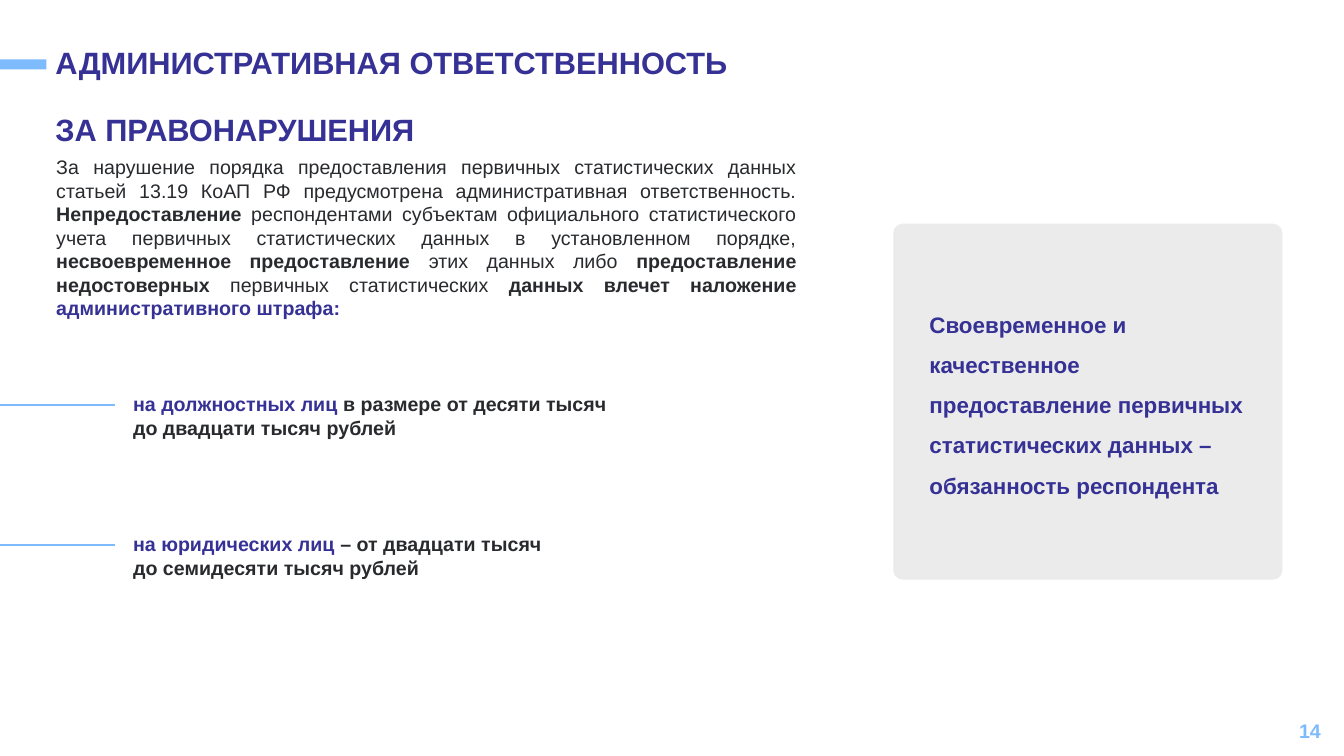
import pptx
import pptx.util
import pptx.dml.color
import pptx.enum.shapes
import pptx.enum.text
import lxml.etree

Inches = pptx.util.Inches
ALIGN = pptx.enum.text.PP_ALIGN
ANCHOR = pptx.enum.text.MSO_ANCHOR
SHAPE = pptx.enum.shapes.MSO_SHAPE

INDIGO, SKY, INK, PALE = "363194", "7DBBFC", "282A2E", "EBEBEB"


def rgb(value):
    return pptx.dml.color.RGBColor.from_string(value)


def write(tf, paragraphs, size, frame=None, **layout):
    """Fill a frame with paragraphs, each a list of (text, colour, bold) runs."""
    frame = {"word_wrap": True, "auto_size": pptx.enum.text.MSO_AUTO_SIZE.NONE,
             "vertical_anchor": ANCHOR.TOP, **(frame or {})}
    for name, value in frame.items():
        setattr(tf, name, value)
    for i, runs in enumerate(paragraphs):
        p = tf.paragraphs[0] if i == 0 else tf.add_paragraph()
        for name, value in layout.items():
            if i or name != "space_before":
                setattr(p, name, value)
        for text, color, bold in runs:
            r = p.add_run()
            r.text = text
            font = {"name": "Arial", "size": pptx.util.Pt(size), "bold": bold}
            for name, value in font.items():
                setattr(r.font, name, value)
            r.font.color.rgb = rgb(color)


def add_text(shapes, box, paragraphs, size, frame=None, **layout):
    sp = shapes.add_textbox(*map(Inches, box))
    write(sp.text_frame, paragraphs, size, frame, **layout)


def add_block(shapes, kind, box, color):
    sp = shapes.add_shape(kind, *map(Inches, box))
    sp.shadow.inherit = False
    sp.fill.solid()
    sp.fill.fore_color.rgb = rgb(color)
    sp.line.fill.background()
    return sp


def add_heading(slide, left, top, width, height):
    add_block(slide.shapes, SHAPE.RECTANGLE, (0, top + 0.16, left + 0.01, 0.1), SKY)
    title = slide.shapes.title
    place = {"left": left, "top": top, "width": width, "height": height}
    for name, value in place.items():
        setattr(title, name, Inches(value))
    lines = ["АДМИНИСТРАТИВНАЯ ОТВЕТСТВЕННОСТЬ", "ЗА ПРАВОНАРУШЕНИЯ"]
    write(title.text_frame, [[(line, INDIGO, True)] for line in lines], 22,
          alignment=ALIGN.LEFT, line_spacing=0.9, space_before=pptx.util.Pt(24))


def add_intro(slide, box):
    runs = [
        ("За нарушение порядка предоставления первичных статистических данных "
         "статьей 13.19 КоАП РФ предусмотрена административная ответственность. ", INK, False),
        ("Непредоставление", INK, True),
        (" респондентами субъектам официального статистического учета первичных "
         "статистических данных в установленном порядке, ", INK, False),
        ("несвоевременное предоставление ", INK, True),
        ("этих данных либо ", INK, False),
        ("предоставление недостоверных", INK, True),
        (" первичных статистических ", INK, False),
        ("данных влечет наложение ", INK, True),
        ("административного штрафа:", INDIGO, True),
    ]
    add_text(slide.shapes, box, [runs], 14, alignment=ALIGN.JUSTIFY)


def add_fine(slide, left, top, width, height, who, amount, limit):
    """Place one fine with the rule that leads to it from the slide's edge."""
    y = Inches(top + 0.14)
    rule = slide.shapes.add_connector(
        pptx.enum.shapes.MSO_CONNECTOR.STRAIGHT, Inches(left - 0.18), y, 0, y)
    rule.line.color.rgb = rgb(SKY)
    rule.line.width = pptx.util.Pt(1.5)
    lxml.etree.SubElement(rule._element.spPr, pptx.oxml.ns.qn("a:effectLst"))
    frame = {"margin_left": 0, "margin_right": 0, "margin_top": Inches(0.01), "margin_bottom": 0}
    add_text(slide.shapes, (left, top, width, height),
             [[(who, INDIGO, True), (amount, INK, True)], [(limit, INK, True)]],
             14, frame, alignment=ALIGN.JUSTIFY)


def add_duty_card(slide, left, top, width, height):
    group = slide.shapes.add_group_shape()
    card = add_block(group.shapes, SHAPE.ROUNDED_RECTANGLE, (left, top, width, height), PALE)
    card.adjustments[0] = 0.026
    lines = ["Своевременное и качественное предоставление первичных",
             "статистических данных – обязанность респондента"]
    add_text(group.shapes, (left + 0.26, top + 0.68, width - 0.52, 2.12),
             [[(line, INDIGO, True)] for line in lines], 16, line_spacing=1.5)


def add_page_number(slide, box, number):
    add_text(slide.shapes, box, [[(number, SKY, True)]], 14,
             {"vertical_anchor": ANCHOR.MIDDLE}, alignment=ALIGN.RIGHT)


def main():
    prs = pptx.Presentation()
    prs.slide_width, prs.slide_height = Inches(13.33), Inches(7.5)
    slide = prs.slides.add_slide(prs.slide_layouts.get_by_name("Title Only"))
    add_heading(slide, 0.45, 0.43, 6.94, 0.86)
    add_intro(slide, (0.46, 1.49, 7.54, 2.17))
    fines = [
        ("на должностных лиц ", "в размере от десяти тысяч ", "до двадцати тысяч рублей"),
        ("на юридических лиц ", "– от двадцати тысяч ", "до семидесяти тысяч рублей"),
    ]
    for i, fine in enumerate(fines):
        add_fine(slide, 1.32, 3.88 + 1.39 * i, 6.83, 0.49, *fine)
    add_duty_card(slide, 8.86, 2.22, 3.86, 3.53)
    add_page_number(slide, (10.2, 7.05, 3, 0.4), "14")
    prs.save("out.pptx")


if __name__ == "__main__":
    main()
